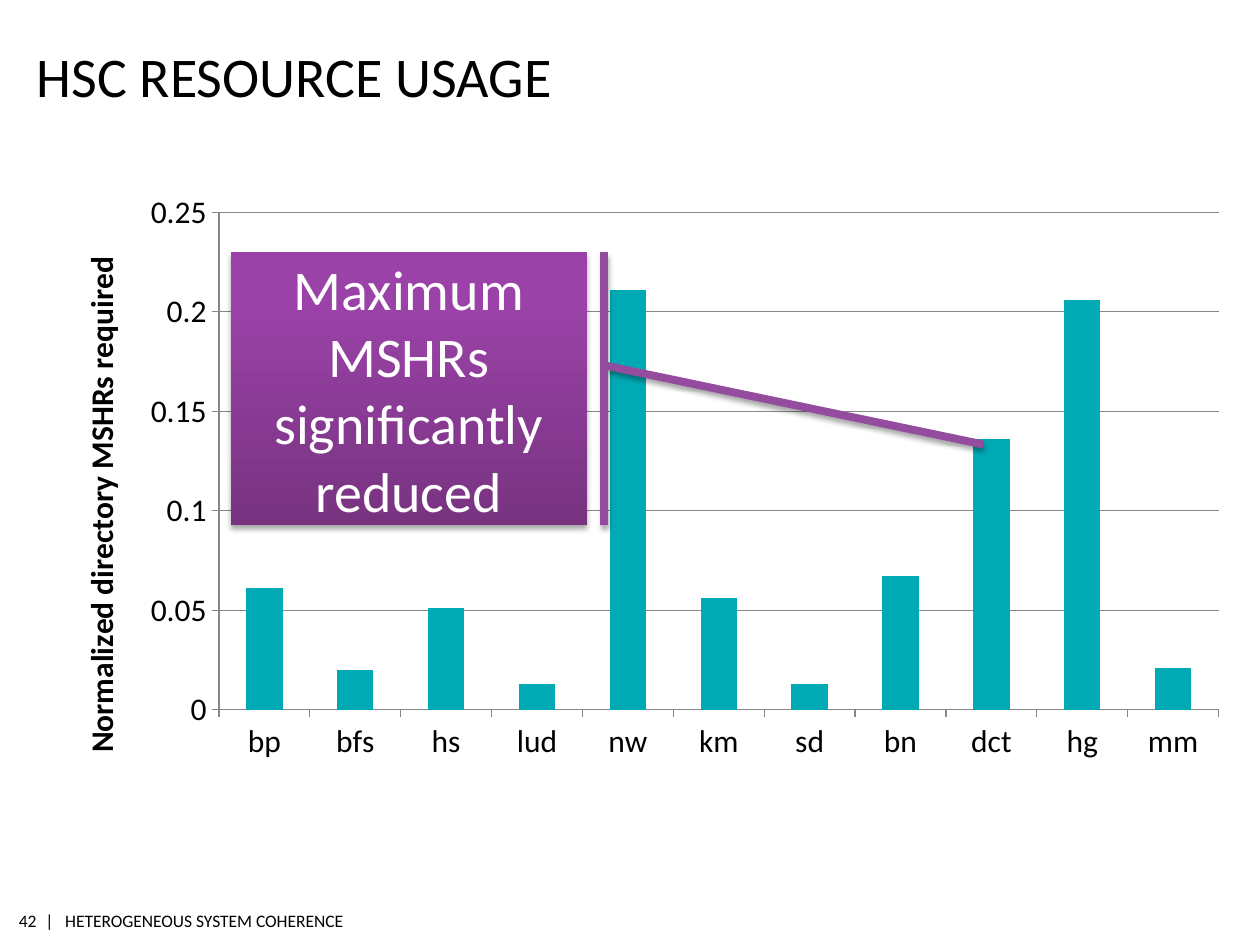
from copy import deepcopy
from dataclasses import dataclass

from pptx import Presentation
from pptx.chart.data import CategoryChartData
from pptx.dml.color import RGBColor
from pptx.enum.chart import XL_CHART_TYPE as Kind, XL_TICK_MARK as Tick
from pptx.enum.shapes import MSO_SHAPE as Form
from pptx.enum.text import MSO_ANCHOR as Anchor, MSO_AUTO_SIZE as Fit, PP_ALIGN as Align
from pptx.oxml import parse_xml
from pptx.oxml.ns import nsdecls, qn
from pptx.util import Inches, Pt

FACE, BLACK, WHITE = "Calibri", "000000", "FFFFFF"
TEAL, GREY, PLUM = "00AAB5", "868686", "944C9E"
WIDE, HIGH = Inches(10), Inches(7.5)


@dataclass
class Box:
    """A place on the slide, in shares of its width and height."""
    x: float
    y: float
    w: float
    h: float

    def emu(self) -> tuple:
        return (int(self.x * WIDE), int(self.y * HIGH),
                int(self.w * WIDE), int(self.h * HIGH))


@dataclass
class Note:
    text: str
    box: Box
    align: Align


NOTES = [
    Note("|   HETEROGENEOUS SYSTEM COHERENCE", Box(.036, .957, .259, .035), Align.LEFT),
    Note("42", Box(.013, .957, .016, .035), Align.RIGHT),
]
USAGE = {"bp": .061, "bfs": .02, "hs": .051, "lud": .013, "nw": .211, "km": .056,
         "sd": .013, "bn": .067, "dct": .136, "hg": .206, "mm": .021}
STOPS = [(0, "773380"), (.8, "9A42A7"), (1, "9C40A9")]


def tint(code: str) -> RGBColor:
    return RGBColor.from_string(code)


def style(font, size: float, code: str = BLACK, bold: bool = False) -> None:
    font.name, font.size, font.bold = FACE, Pt(size), bold
    font.color.rgb = tint(code)


def write(shape, text: str, size: float, code: str = BLACK, align=Align.LEFT,
          anchor=Anchor.MIDDLE, pads=None, wrap: bool = True) -> None:
    frame = shape.text_frame
    frame.text, frame.word_wrap = text, wrap
    frame.auto_size, frame.vertical_anchor = Fit.NONE, anchor
    if pads:
        (frame.margin_left, frame.margin_top,
         frame.margin_right, frame.margin_bottom) = map(Inches, pads)
    para = frame.paragraphs[0]
    para.alignment = align
    style(para.font, size, code)


def place(owner, inner: bool = False, **spots: float) -> None:
    """Give a chart part a fixed layout, in shares of the chart."""
    modes = '<c:layoutTarget val="inner"/>' if inner else ""
    modes += '<c:xMode val="edge"/><c:yMode val="edge"/>'
    marks = "".join(f'<c:{key} val="{val}"/>' for key, val in spots.items())
    for old in owner.findall(qn("c:layout")):
        owner.remove(old)
    node = parse_xml(f'<c:layout {nsdecls("c")}><c:manualLayout>{modes}{marks}'
                     '</c:manualLayout></c:layout>')
    text = owner.find(qn("c:tx"))
    owner.insert(0 if text is None else owner.index(text) + 1, node)


def draw_chart(slide, box: Box) -> None:
    data = CategoryChartData()
    data.categories = list(USAGE)
    data.add_series("Series 1", list(USAGE.values()))
    chart = slide.shapes.add_chart(Kind.COLUMN_CLUSTERED, *box.emu(), data).chart
    chart.has_legend = chart.has_title = False
    style(chart.font, 18)

    # Bars
    plot = chart.plots[0]
    plot.gap_width, plot.vary_by_categories = 150, False
    fill = plot.series[0].format.fill
    fill.solid()
    fill.fore_color.rgb = tint(TEAL)

    # Axes and grid
    cat, val = chart.category_axis, chart.value_axis
    val.minimum_scale, val.maximum_scale, val.major_unit = 0, .25, .05
    val.has_major_gridlines = True
    val.tick_labels.number_format = "General"
    val.tick_labels.number_format_is_linked = False
    for axis in (cat, val):
        axis.major_tick_mark, axis.minor_tick_mark = Tick.OUTSIDE, Tick.NONE
    for part in (cat, val, val.major_gridlines):
        part.format.line.color.rgb = tint(GREY)
        part.format.line.width = Pt(.75)

    # Axis title
    title = val.axis_title
    frame = title.text_frame
    frame.text = "Normalized directory MSHRs required"
    style(frame.paragraphs[0].font, 18, bold=True)
    body = frame._txBody.find(qn("a:bodyPr"))
    body.set("rot", "-5400000")
    body.set("vert", "horz")
    place(title._element, x=.03, y=.09)
    place(chart._chartSpace.chart.plotArea, True, x=.153, y=.033, w=.844, h=.731)


def draw_callout(slide, box: Box, text: str) -> None:
    shape = slide.shapes.add_shape(Form.LINE_CALLOUT_1_ACCENT_BAR, *box.emu())
    for at, val in enumerate((.414, 1.048, .704, 2.112)):
        shape.adjustments[at] = val
    shape.line.color.rgb, shape.line.width = tint(PLUM), Pt(4.5)

    # Gradient, dark at the foot
    shape.fill.gradient()
    shape.fill.gradient_angle = 90
    props = shape._element.spPr
    ramp = props.find(".//" + qn("a:gsLst"))
    ramp.append(deepcopy(ramp[0]))
    for stop, (spot, code) in zip(shape.fill.gradient_stops, STOPS):
        stop.position, stop.color.rgb = spot, tint(code)

    # Soft shadow
    shape.shadow.inherit = False
    props.find(qn("a:effectLst")).append(parse_xml(
        f'<a:outerShdw {nsdecls("a")} blurRad="{Pt(3.1)}" dist="{Pt(1.8)}" '
        'dir="5400000" rotWithShape="0"><a:srgbClr val="000000">'
        '<a:alpha val="35000"/></a:srgbClr></a:outerShdw>'))
    write(shape, text, 32, WHITE, Align.CENTER)


def main() -> None:
    deck = Presentation()
    deck.slide_width, deck.slide_height = WIDE, HIGH
    slide = deck.slides.add_slide(deck.slide_layouts[5])

    # Footer
    for note in NOTES:
        area = slide.shapes.add_textbox(*note.box.emu())
        write(area, note.text, 10, align=note.align, pads=(0, .04, 0, .04), wrap=False)

    # Title
    title = slide.shapes.title
    title.left, title.top, title.width, title.height = Box(.029, .045, .84, .07).emu()
    write(title, "HSC RESOURCE USAGE", 32, anchor=Anchor.BOTTOM, pads=(0, .05, 0, 0))

    # Chart and its callout
    draw_chart(slide, Box(.03, .201, .94, .72))
    draw_callout(slide, Box(.183, .267, .283, .289), "Maximum MSHRs significantly reduced")
    deck.save("out.pptx")


if __name__ == "__main__":
    main()
